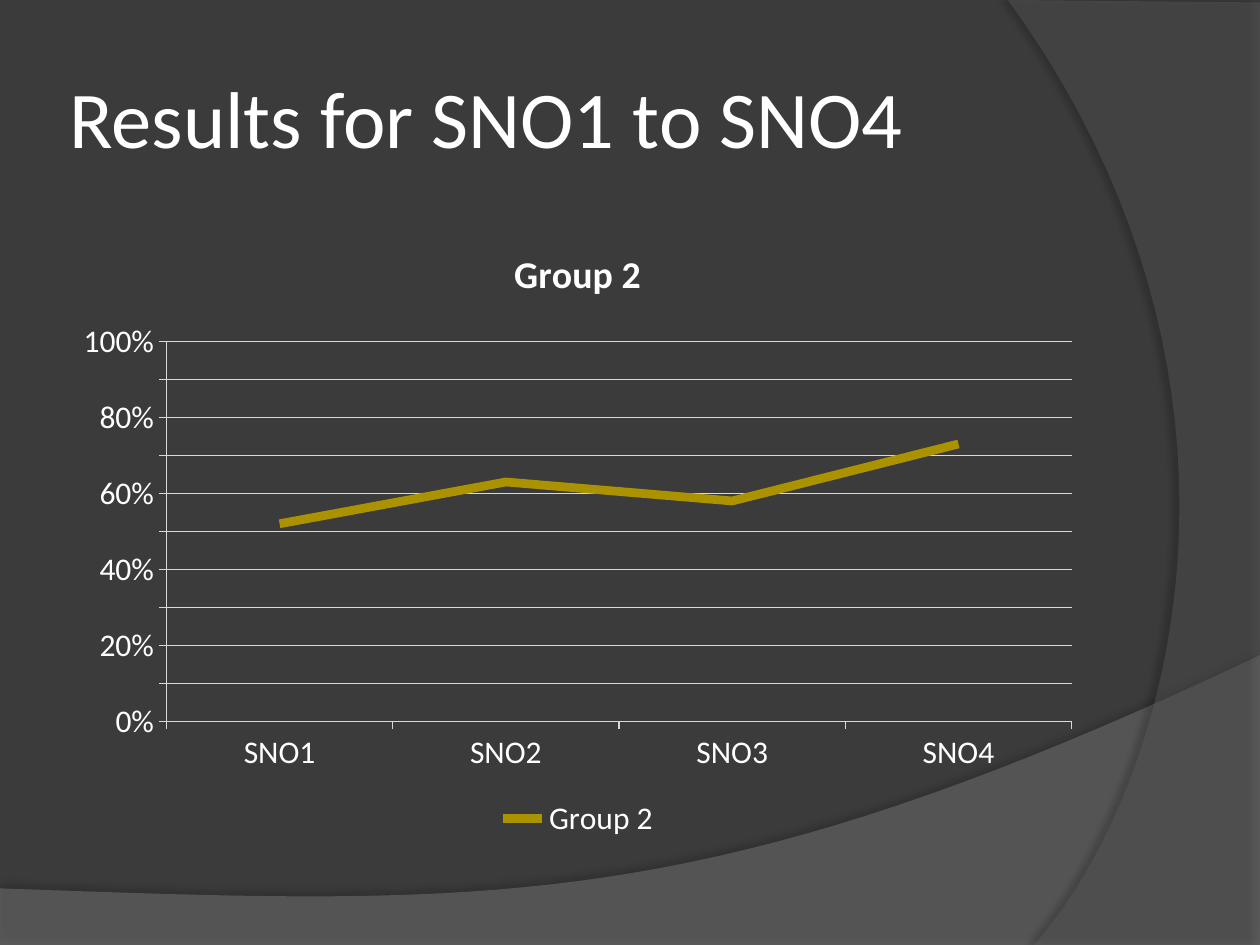
from dataclasses import dataclass

from lxml.etree import SubElement
from pptx import Presentation
from pptx.chart.data import CategoryChartData
from pptx.dml.color import RGBColor
from pptx.enum.chart import XL_CHART_TYPE as ChartType
from pptx.enum.chart import XL_LEGEND_POSITION as LegendPosition
from pptx.enum.chart import XL_TICK_MARK as TickMark
from pptx.enum.text import MSO_ANCHOR as Anchor
from pptx.oxml.ns import qn
from pptx.util import Cm, Pt


@dataclass(frozen=True)
class Theme:
    font: str = "Calibri"
    background: str = "3B3B3B"
    text: str = "FFFFFF"
    grid: str = "D9D9D9"
    series: str = "AA9200"
    wave: str = "7F7F7F"
    arc: str = "5E5E5E"
    shadow: str = "000000"
    title_size: float = 46
    chart_size: float = 18
    chart_title_size: float = 21.6


THEME = Theme()


def color(value):
    return RGBColor.from_string(value)


def curve(start, control1, control2, end, steps=40):
    """Points along a cubic Bezier curve, in centimetres."""
    points = []
    for step in range(steps + 1):
        t = step / steps
        weights = ((1 - t) ** 3, 3 * t * (1 - t) ** 2, 3 * t ** 2 * (1 - t), t ** 3)
        points.append(tuple(
            sum(weight * value for weight, value in zip(weights, values))
            for values in zip(start, control1, control2, end)
        ))
    return points


def add_backdrop(slide, points, fill, opacity, shadow_opacity, distance, direction):
    """Translucent outline with a soft shadow; percentages and degrees."""
    vertices = [(Cm(x), Cm(y)) for x, y in points]
    builder = slide.shapes.build_freeform(*vertices[0])
    builder.add_line_segments(vertices[1:], close=True)
    shape = builder.convert_to_shape()
    shape.line.fill.background()
    shape.fill.solid()
    shape.fill.fore_color.rgb = color(fill)
    fill_element = shape.fill._xPr.find(qn("a:solidFill"))[0]
    SubElement(fill_element, qn("a:alpha"), val=str(opacity * 1000))

    shape.shadow.inherit = False
    effects = shape.element.spPr.find(qn("a:effectLst"))
    shadow = SubElement(
        effects, qn("a:outerShdw"), blurRad=str(Pt(4)), dist=str(Pt(distance)),
        dir=str(direction * 60000), algn="ctr", rotWithShape="0",
    )
    shadow_color = SubElement(shadow, qn("a:srgbClr"), val=THEME.shadow)
    SubElement(shadow_color, qn("a:alpha"), val=str(shadow_opacity * 1000))


def add_title(slide, text, left, top, width, height):
    frame = slide.shapes.add_textbox(Cm(left), Cm(top), Cm(width), Cm(height)).text_frame
    frame.word_wrap = True
    frame.vertical_anchor = Anchor.MIDDLE
    frame.margin_left = frame.margin_right = Cm(0.13)
    frame.margin_top = frame.margin_bottom = Cm(0.13)
    paragraph = frame.paragraphs[0]
    paragraph.text = text
    style_font(paragraph.font, THEME.title_size)


def style_font(font, size, bold=False):
    font.name = THEME.font
    font.size = Pt(size)
    font.bold = bold
    font.color.rgb = color(THEME.text)


def style_line(line, value, width):
    line.color.rgb = color(value)
    line.width = Pt(width)


def add_line_chart(slide, name, categories, values, left, top, width, height):
    data = CategoryChartData(number_format="0%")
    data.categories = categories
    data.add_series(name, values)
    chart = slide.shapes.add_chart(
        ChartType.LINE, Cm(left), Cm(top), Cm(width), Cm(height), data
    ).chart
    style_font(chart.font, THEME.chart_size)

    # Title and legend
    chart.has_title = True
    paragraph = chart.chart_title.text_frame.paragraphs[0]
    paragraph.text = name
    style_font(paragraph.font, THEME.chart_title_size, bold=True)
    chart.has_legend = True
    chart.legend.position = LegendPosition.BOTTOM
    chart.legend.include_in_layout = False

    # Axes
    for axis in (chart.category_axis, chart.value_axis):
        axis.major_tick_mark = TickMark.OUTSIDE
        axis.minor_tick_mark = TickMark.NONE
        style_line(axis.format.line, THEME.grid, 0.75)
    value_axis = chart.value_axis
    value_axis.minimum_scale, value_axis.maximum_scale = 0, 1
    value_axis.tick_labels.number_format = "0%"
    value_axis.tick_labels.number_format_is_linked = False
    style_line(value_axis.major_gridlines.format.line, THEME.grid, 0.75)

    # Series
    chart.plots[0].vary_by_categories = False
    series = chart.plots[0].series[0]
    series.smooth = False
    style_line(series.format.line, THEME.series, 5)


def main():
    presentation = Presentation()
    presentation.slide_width, presentation.slide_height = Cm(25.4), Cm(19.05)
    slide = presentation.slides.add_slide(presentation.slide_layouts[6])
    slide.background.fill.solid()
    slide.background.fill.fore_color.rgb = color(THEME.background)

    # Backdrop: wave along the bottom, arc down the right side
    wave = curve((25.4, 13.21), (14.2, 18.52), (9.93, 18.26), (0, 17.91))
    add_backdrop(slide, wave + [(0, 19.07), (25.4, 19.07)], THEME.wave, 45, 35, 3.5, 270)
    arc = curve((20.85, 19.05), (23.75, 15.72), (25.86, 7.62), (20.32, 0))
    add_backdrop(slide, arc + [(25.4, 0.05), (25.4, 19.05)], THEME.arc, 40, 45, 4, 180)

    # Content
    add_title(slide, "Results for SNO1 to SNO4", 1.27, 0.76, 20.75, 3.18)
    add_line_chart(
        slide, "Group 2", ["SNO1", "SNO2", "SNO3", "SNO4"],
        [0.52, 0.63, 0.58, 0.73], 1.27, 4.45, 20.75, 12.57,
    )
    presentation.save("out.pptx")


if __name__ == "__main__":
    main()
